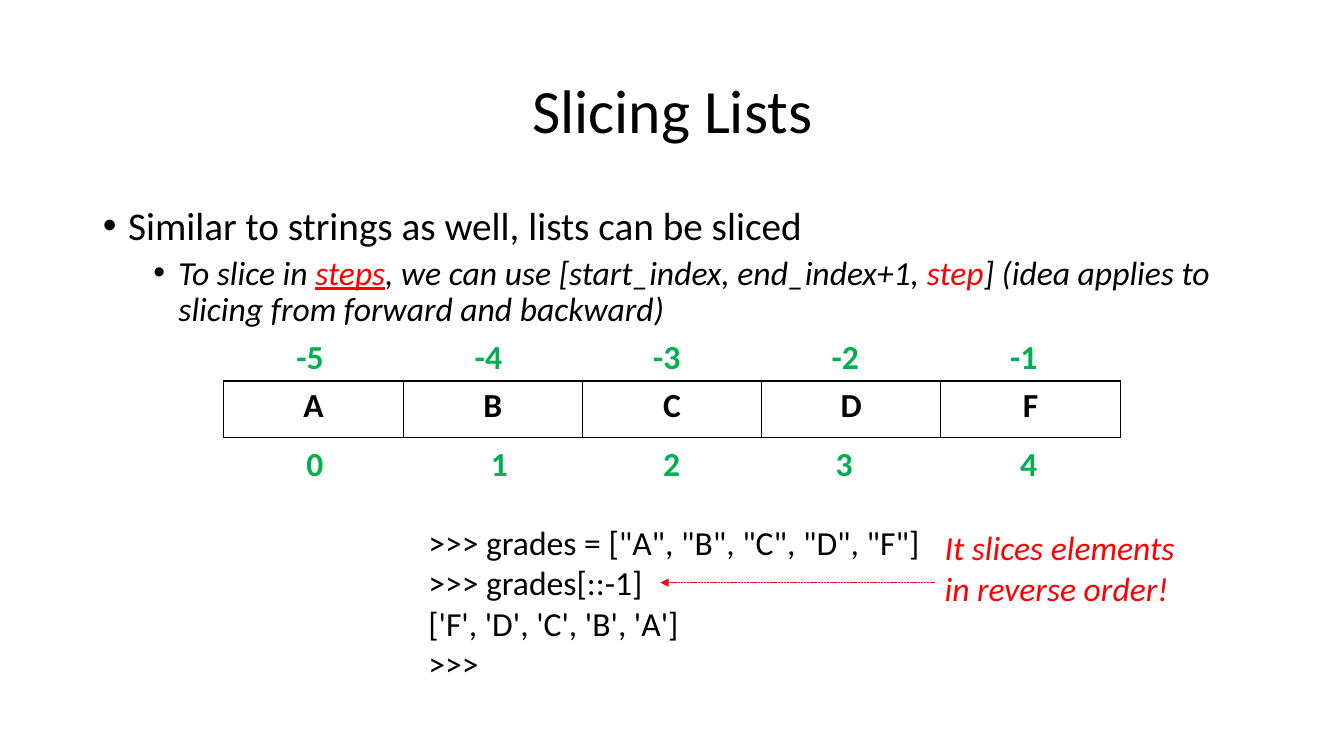
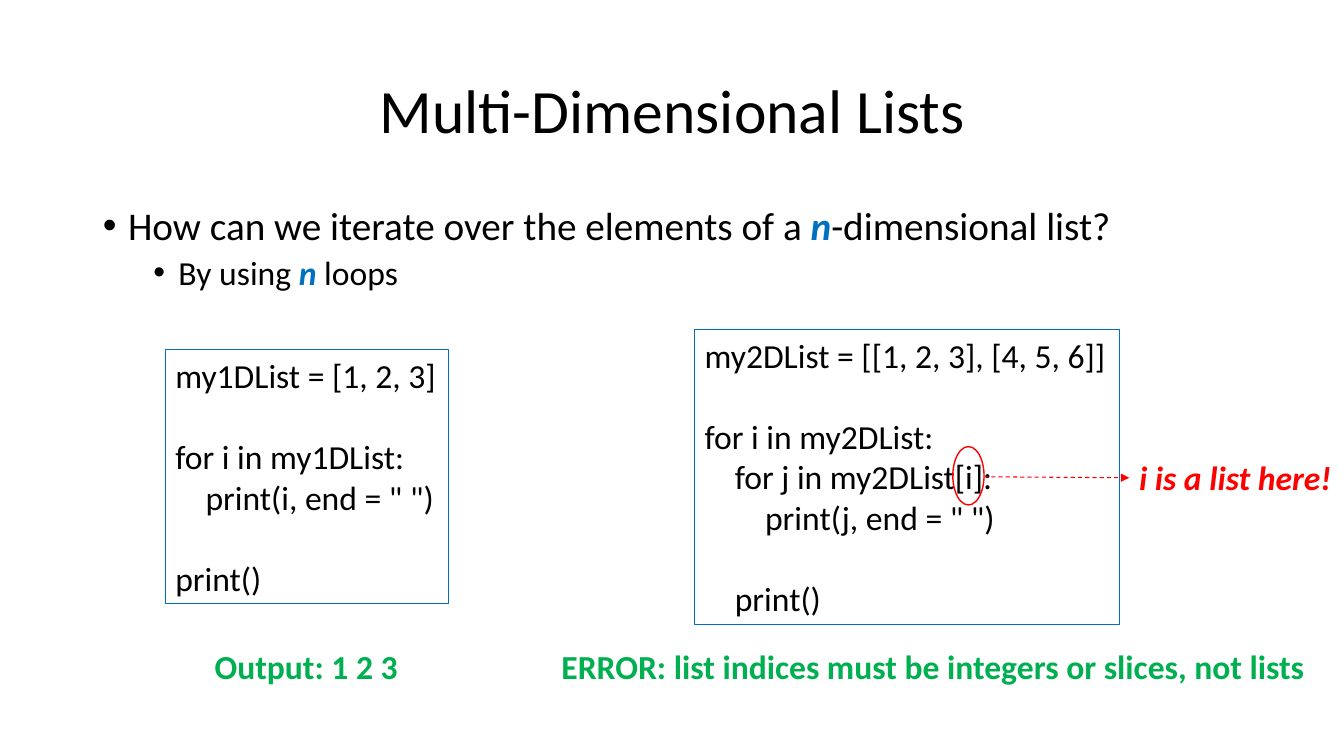
import lxml.etree
import pptx
import pptx.dml.color
import pptx.enum.dml
import pptx.enum.shapes
import pptx.enum.text
import pptx.oxml
import pptx.oxml.ns
import pptx.util

Inches = pptx.util.Inches
Pt = pptx.util.Pt
Align = pptx.enum.text.PP_ALIGN
Anchor = pptx.enum.text.MSO_ANCHOR
Dash = pptx.enum.dml.MSO_LINE
qn = pptx.oxml.ns.qn

FONT = "Calibri"
HUES = {"black": "000000", "red": "FF0000", "green": "00B050", "blue": "0070C0"}
CODE_STEP = 0.3  # inches for each level of code
LINE_GAP = 29.3  # points, one line of 24 point text


def get_hue(name):
    return pptx.dml.color.RGBColor.from_string(HUES[name])


def add_run(para, text, size=24, hue="black", style=""):
    """Add one run; style holds any of the letters b, i and u."""
    run = para.add_run()
    run.text = text
    font = run.font
    font.name, font.size = FONT, Pt(size)
    font.color.rgb = get_hue(hue)
    font.bold, font.italic, font.underline = (mark in style for mark in "biu")


def next_para(frame, index):
    return frame.add_paragraph() if index else frame.paragraphs[0]


def set_line(line, hue, width, dash=None):
    line.color.rgb = get_hue(hue)
    line.width = Pt(width)
    if dash:
        line.dash_style = dash


def add_box(slide, left, top, width, height):
    box = slide.shapes.add_textbox(*map(Inches, (left, top, width, height)))
    box.text_frame.word_wrap = False
    return box


def add_label(slide, place, text, hue="green", style="b"):
    """Add a short note; a line feed in the text makes a line break."""
    para = add_box(slide, *place).text_frame.paragraphs[0]
    for index, part in enumerate(text.split("\n")):
        if index:
            para.add_line_break()
        add_run(para, part, hue=hue, style=style)


def add_code(slide, place, lines, framed=True):
    """Add code given as (level, text) pairs; None leaves a line's gap."""
    box = add_box(slide, *place)
    if framed:
        set_line(box.line, "blue", 0.75)
    gap = 0
    count = 0
    for line in lines:
        if line is None:
            gap += LINE_GAP
            continue
        level, text = line
        para = next_para(box.text_frame, count)
        para.space_before = Pt(gap)
        para._p.get_or_add_pPr().set("marL", str(Inches(level * CODE_STEP)))
        add_run(para, text)
        gap = 0
        count += 1


def set_bullet(para, left):
    props = para._p.get_or_add_pPr()
    props.set("marL", str(Inches(left)))
    props.set("indent", str(Inches(-0.25)))
    font = lxml.etree.SubElement(props, qn("a:buFont"))
    font.set("typeface", "Arial")
    lxml.etree.SubElement(props, qn("a:buChar")).set("char", "•")


def add_slide(deck, title, points):
    """Add a titled slide; each point is a list of runs, one level deeper each."""
    slide = deck.slides.add_slide(deck.slide_layouts[1])
    head, body = slide.placeholders
    places = ((0.92, 0.4, 11.5, 1.45), (0.92, 2, 11.5, 4.76))
    for holder, place in zip((head, body), places):
        holder.left, holder.top, holder.width, holder.height = map(Inches, place)
        holder.text_frame.auto_size = pptx.enum.text.MSO_AUTO_SIZE.NONE
    head.text_frame.vertical_anchor = Anchor.MIDDLE
    para = head.text_frame.paragraphs[0]
    para.alignment, para.line_spacing = Align.CENTER, 0.9
    add_run(para, title, 44)
    for level, runs in enumerate(points):
        para = next_para(body.text_frame, level)
        para.level, para.line_spacing = level, 0.9
        para.space_before = Pt((10, 5)[level])
        set_bullet(para, 0.25 + level * 0.5)
        for text, *look in runs:
            add_run(para, text, (28, 24)[level], *look)
    return slide


def add_arrow(slide, start, end, width, dash):
    kind = pptx.enum.shapes.MSO_CONNECTOR.STRAIGHT
    arrow = slide.shapes.add_connector(kind, *map(Inches, start + end))
    set_line(arrow.line, "red", width, dash)
    tail = lxml.etree.SubElement(arrow.line._get_or_add_ln(), qn("a:tailEnd"))
    tail.set("type", "triangle")
    lxml.etree.SubElement(arrow._element.spPr, qn("a:effectLst"))


def add_ring(slide, place):
    kind = pptx.enum.shapes.MSO_SHAPE.OVAL
    ring = slide.shapes.add_shape(kind, *map(Inches, place))
    ring.shadow.inherit = False
    ring.fill.background()
    set_line(ring.line, "red", 1)


def add_edges(cell):
    props = cell._tc.get_or_add_tcPr()
    for side in "LRTB":
        edge = lxml.etree.SubElement(props, qn("a:ln" + side))
        edge.set("w", str(Pt(1)))
        fill = lxml.etree.SubElement(edge, qn("a:solidFill"))
        lxml.etree.SubElement(fill, qn("a:srgbClr")).set("val", HUES["black"])


def add_row(slide, place, items):
    """Add a table of one row with plain cells and thin edges."""
    table = slide.shapes.add_table(1, len(items), *map(Inches, place)).table
    table.first_row = table.horz_banding = False
    for cell, item in zip(table.iter_cells(), items):
        add_edges(cell)
        cell.fill.background()
        para = cell.text_frame.paragraphs[0]
        para.alignment = Align.CENTER
        add_run(para, item, style="b")


def build_slices(deck):
    slide = add_slide(deck, "Slicing Lists", [
        [("Similar to strings as well, lists can be sliced",)],
        [("To slice in ", "black", "i"),
         ("steps", "red", "iu"),
         (", we can use [start_index, end_index+1, ", "black", "i"),
         ("step", "red", "i"),
         ("] (idea applies to slicing from forward and backward)", "black", "i")],
    ])
    add_row(slide, (2.22, 3.78, 8.89, 0.56), "ABCDF")
    for index, left in enumerate((2.94, 4.77, 6.48, 8.19, 10.02)):
        add_label(slide, (2.84 + index * 1.77, 3.28, 0.48, 0.5), str(index - 5))
        add_label(slide, (left, 4.34, 0.37, 0.5), str(index))
    add_code(slide, (4.15, 5.13, 5.12, 1.72), [
        (0, '>>> grades = ["A", "B", "C", "D", "F"]'),
        (0, ">>> grades[::-1]"),
        (0, "['F', 'D', 'C', 'B', 'A']"),
        (0, ">>>"),
    ], framed=False)
    add_label(slide, (9.27, 5.18, 2.51, 0.91),
              "It slices elements\nin reverse order!", "red", "i")
    add_arrow(slide, (9.27, 5.78), (6.55, 5.78), 0.5, Dash.SQUARE_DOT)


def build_loops(deck):
    slide = add_slide(deck, "Multi-Dimensional Lists", [
        [("How can we iterate over the elements of a ",),
         ("n", "blue", "bi"),
         ("-dimensional list?",)],
        [("By using ",), ("n ", "blue", "bi"), ("loops",)],
    ])
    add_code(slide, (1.64, 3.47, 2.81, 2.52), [
        (0, "my1DList = [1, 2, 3]"),
        None,
        (0, "for i in my1DList:"),
        (1, 'print(i, end = " ")'),
        None,
        (0, "print()"),
    ])
    add_code(slide, (6.89, 3.27, 4.21, 2.93), [
        (0, "my2DList = [[1, 2, 3], [4, 5, 6]]"),
        None,
        (0, "for i in my2DList:"),
        (1, "for j in my2DList[i]:"),
        (2, 'print(j, end = " ")'),
        None,
        (1, "print()"),
    ])
    add_label(slide, (2.03, 6.36, 2.04, 0.5), "Output: 1 2 3")
    add_label(slide, (5.47, 6.36, 7.65, 0.5),
              "ERROR: list indices must be integers or slices, not lists")
    add_ring(slide, (9.45, 4.43, 0.31, 0.58))
    add_label(slide, (11.2, 4.48, 2.13, 0.5), "i is a list here!", "red", "bi")
    add_arrow(slide, (9.76, 4.73), (11.2, 4.74), 0.75, Dash.DASH)


def main():
    deck = pptx.Presentation()
    deck.slide_width, deck.slide_height = Inches(13.33), Inches(7.5)
    build_slices(deck)
    build_loops(deck)
    deck.save("out.pptx")


if __name__ == "__main__":
    main()
